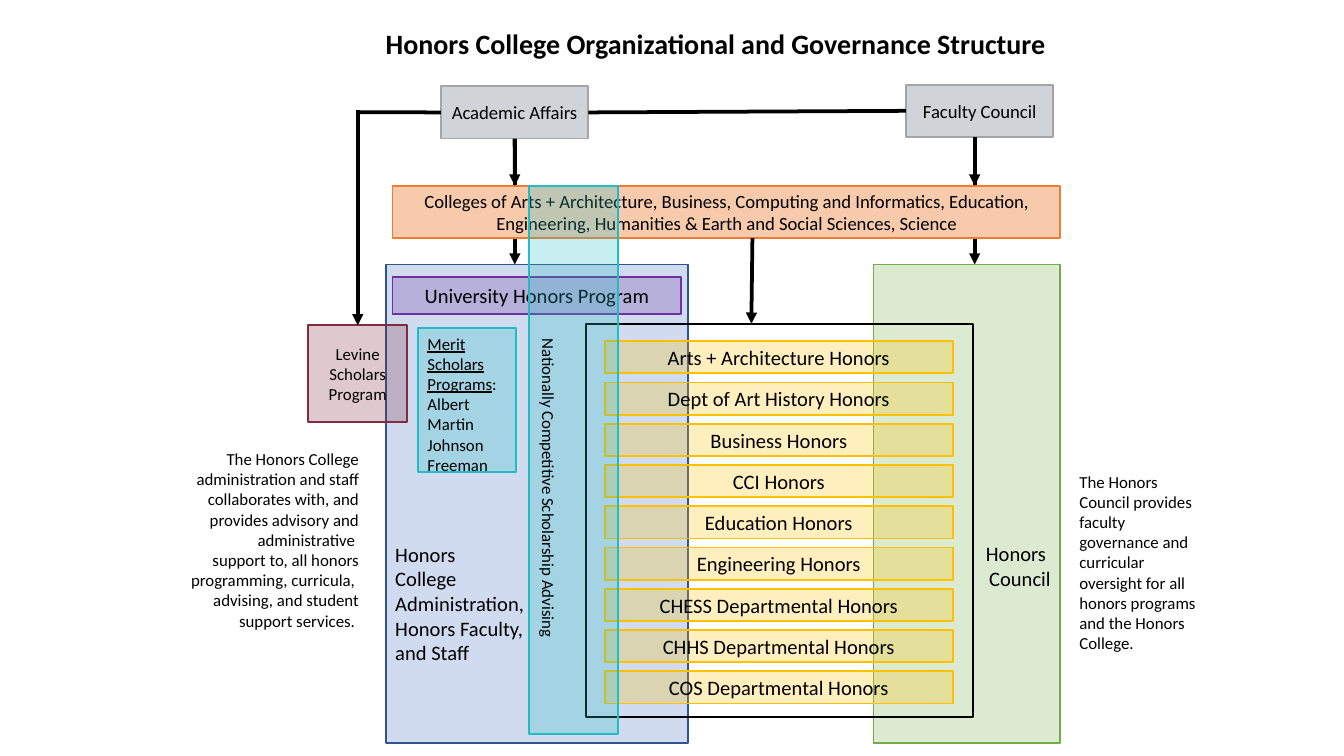
from lxml import etree
from pptx import Presentation
from pptx.dml.color import RGBColor
from pptx.enum.shapes import MSO_CONNECTOR, MSO_SHAPE
from pptx.enum.text import MSO_ANCHOR, MSO_AUTO_SIZE, PP_ALIGN
from pptx.oxml.ns import qn
from pptx.util import Cm, Pt

LEFT, CENTER, RIGHT = PP_ALIGN.LEFT, PP_ALIGN.CENTER, PP_ALIGN.RIGHT
TOP, MIDDLE, BOTTOM = MSO_ANCHOR.TOP, MSO_ANCHOR.MIDDLE, MSO_ANCHOR.BOTTOM
RECTANGLE, STRAIGHT = MSO_SHAPE.RECTANGLE, MSO_CONNECTOR.STRAIGHT
NO_FIT = MSO_AUTO_SIZE.NONE

TITLE = "Honors College Organizational and Governance Structure"
TITLE_PLACE = (7.11, 0.41, 13.23, 0.84)

PROGRAMS = [
    "Arts + Architecture Honors",
    "Dept of Art History Honors",
    "Business Honors",
    "CCI Honors",
    "Education Honors",
    "Engineering Honors",
    "CHESS Departmental Honors",
    "CHHS Departmental Honors",
    "COS Departmental Honors",
]
PROGRAM_LEFT, PROGRAM_TOP, PROGRAM_STEP = 11.43, 6.45, 0.78
PROGRAM_SIZE = (6.58, 0.61)

BOXES = {
    "administration": dict(
        place=(7.29, 5, 5.72, 9.04), fill="4472C4", line="31538F", size=11,
        align=LEFT, anchor=BOTTOM, margins={"margin_bottom": 1.47},
        text=["Honors", "College", "Administration,", "Honors Faculty,", "and Staff"]),
    "council": dict(
        place=(16.51, 5, 3.53, 9.04), fill="70AD47", line="70AD47", size=11,
        align=RIGHT, anchor=BOTTOM, margins={"margin_bottom": 2.88},
        text=["Honors ", "Council"]),
    "academic": dict(
        place=(8.33, 1.63, 2.79, 0.99), fill="44546A", line="A5A5A5", size=10,
        text=["Academic Affairs"]),
    "faculty": dict(
        place=(17.12, 1.6, 2.79, 0.99), fill="44546A", line="A5A5A5", size=10,
        text=["Faculty Council"]),
    "colleges": dict(
        place=(7.42, 3.51, 12.62, 0.99), fill="F7CAAC", line="ED7D31", alpha=100, size=10,
        text=["Colleges of Arts + Architecture, Business, Computing and Informatics, "
              "Education, Engineering, Humanities & Earth and Social Sciences, Science"]),
    **{name: dict(
        place=(PROGRAM_LEFT, PROGRAM_TOP + row * PROGRAM_STEP, *PROGRAM_SIZE),
        fill="FFC000", line="FFC000", size=11, text=[name])
       for row, name in enumerate(PROGRAMS)},
    "programs frame": dict(place=(11.07, 6.12, 7.32, 7.44), line="000000"),
    "university": dict(
        place=(7.42, 5.23, 5.46, 0.71), fill="7030A0", line="7030A0", size=11,
        text=["University Honors Program"]),
    "merit": dict(
        place=(7.9, 6.2, 1.85, 2.72), fill="22BDC4", line="22BDC4", align=LEFT, anchor=TOP,
        underlined="Merit Scholars Programs",
        text=["Merit Scholars Programs:", "Albert", "Martin", "Johnson", "Freeman"]),
    "advising": dict(
        place=(5.66, 7.85, 10.36, 1.68), fill="22BDC4", line="22BDC4", anchor=BOTTOM,
        rotation=90, margins={"margin_left": 1.25, "margin_bottom": 0.18},
        text=["Nationally Competitive Scholarship Advising"]),
    "levine": dict(
        place=(5.82, 6.15, 1.88, 1.83), fill="832B3E", line="832B3E",
        text=["Levine Scholars Program"]),
}

NOTES = [
    dict(place=(3.28, 8.38, 3.68, 4.42), align=RIGHT, anchor=TOP, text=[
        "The Honors College administration and staff collaborates with, and provides "
        "advisory and administrative ",
        "support to, all honors programming, curricula, ",
        "advising, and student support services. "]),
    dict(place=(20.22, 8.81, 2.69, 3.66), align=LEFT, anchor=TOP, text=[
        "The Honors Council provides faculty governance and curricular oversight for all "
        "honors programs and the Honors College."]),
]

BACK_ARROWS = [((18.42, 2.59), (18.42, 5)), ((9.73, 2.62), (9.73, 5))]
FRONT_LINES = [
    dict(ends=((11.12, 2.12), (17.12, 2.1)), begin=("academic", 3), end=("faculty", 1)),
    dict(ends=((14.22, 4.5), (14.2, 6.12)), arrow=True),
    dict(ends=((9.73, 2.62), (9.73, 3.51)), begin=("academic", 2), arrow=True),
    dict(ends=((18.42, 2.59), (18.42, 3.51)), arrow=True),
    dict(ends=((6.76, 2.08), (6.76, 6.15)), end=("levine", 0), arrow=True),
    dict(ends=((6.73, 2.12), (8.33, 2.12)), end=("academic", 1)),
]


def color(value):
    return RGBColor.from_string(value)


def lengths(values):
    return [Cm(value) for value in values]


def write(box, text, size=9, bold=False, align=CENTER, anchor=MIDDLE, margins=None,
          underlined=None):
    frame = box.text_frame
    sides = {"margin_left": 0.18, "margin_right": 0.18, "margin_top": 0.1,
             "margin_bottom": 0.1, **(margins or {})}
    for side, value in sides.items():
        setattr(frame, side, Cm(value))
    for name, value in dict(word_wrap=True, auto_size=NO_FIT, vertical_anchor=anchor).items():
        setattr(frame, name, value)
    for index, line in enumerate(text):
        para = frame.add_paragraph() if index else frame.paragraphs[0]
        para.alignment = align
        spans = [line]
        if underlined and line.startswith(underlined):
            spans = [underlined, line[len(underlined):]]
        for part in spans:
            span = para.add_run()
            span.text = part
            font = dict(name="Calibri", size=Pt(size), bold=bold, underline=part == underlined)
            for name, value in font.items():
                setattr(span.font, name, value)
            span.font.color.rgb = color("000000")


def draw_box(page, place, line, fill=None, alpha=25, rotation=0, text=(), **style):
    box = page.shapes.add_shape(RECTANGLE, *lengths(place))
    box.shadow.inherit = False
    box.rotation = rotation
    box.line.color.rgb = color(line)
    box.line.width = Pt(1)
    if fill:
        box.fill.solid()
        box.fill.fore_color.rgb = color(fill)
        tint = box._element.spPr.find(qn("a:solidFill"))[0]
        if alpha < 100:
            etree.SubElement(tint, qn("a:alpha"), val=str(alpha * 1000))
    else:
        box.fill.background()
    write(box, text, **style)
    return box


def draw_line(page, boxes, ends, begin=None, end=None, arrow=False):
    start, finish = ends
    connector = page.shapes.add_connector(STRAIGHT, *lengths(start + finish))
    connector.line.color.rgb = color("000000")
    connector.line.width = Pt(2)
    if begin:
        connector.begin_connect(boxes[begin[0]], begin[1])
    if end:
        connector.end_connect(boxes[end[0]], end[1])
    properties = connector._element.spPr
    if arrow:
        etree.SubElement(properties.find(qn("a:ln")), qn("a:tailEnd"), type="triangle")
    etree.SubElement(properties, qn("a:effectLst"))


def main():
    deck = Presentation()
    deck.slide_width, deck.slide_height = lengths((25.4, 14.29))
    page = deck.slides.add_slide(deck.slide_layouts[5])

    title = page.shapes.title
    title.left, title.top, title.width, title.height = lengths(TITLE_PLACE)
    write(title, [TITLE], size=15, bold=True, align=LEFT, anchor=TOP)

    for ends in BACK_ARROWS:
        draw_line(page, {}, ends, arrow=True)
    boxes = {name: draw_box(page, **box) for name, box in BOXES.items()}
    for note in NOTES:
        style = dict(note)
        write(page.shapes.add_textbox(*lengths(style.pop("place"))), **style)
    for line in FRONT_LINES:
        draw_line(page, boxes, **line)

    deck.save("out.pptx")


if __name__ == "__main__":
    main()
